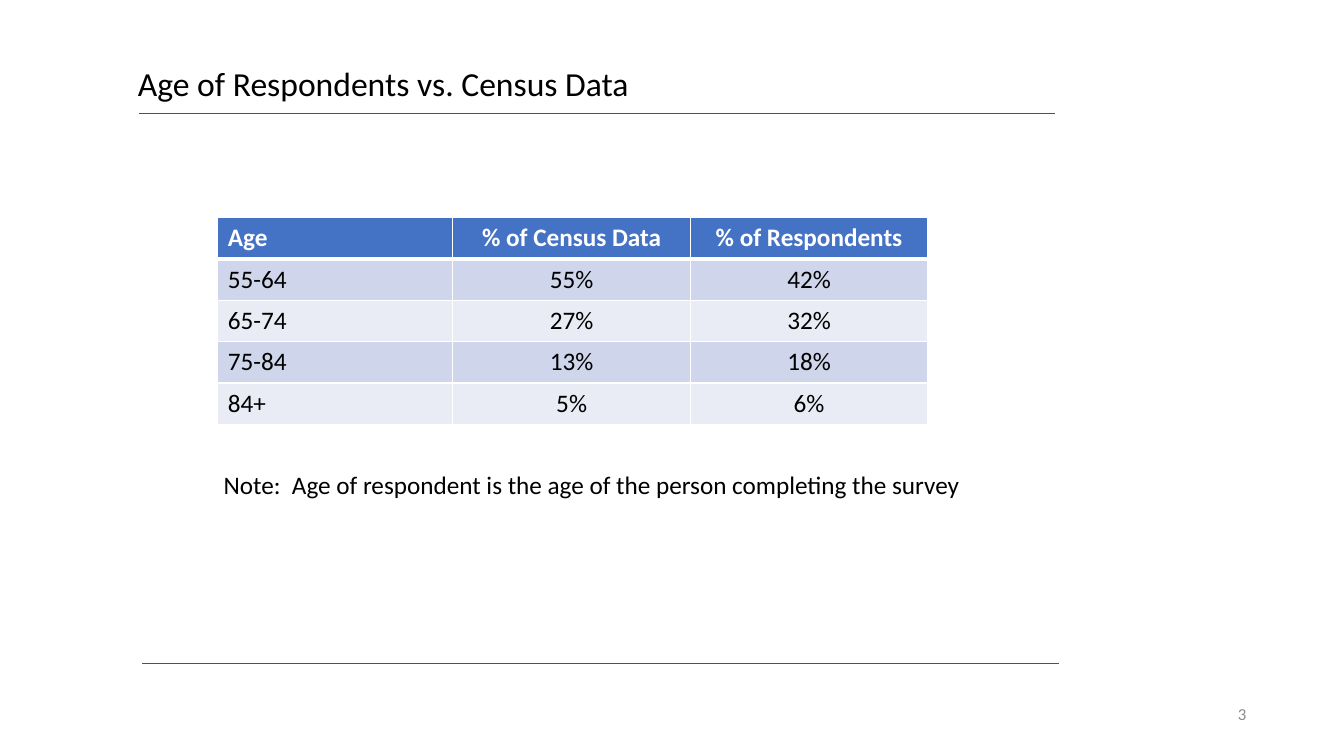
from dataclasses import dataclass

from lxml.etree import SubElement
from pptx import Presentation
from pptx.dml.color import RGBColor
from pptx.enum.shapes import MSO_CONNECTOR
from pptx.enum.text import MSO_ANCHOR as Anchor, PP_ALIGN as Align
from pptx.oxml import parse_xml
from pptx.oxml.ns import nsdecls, qn
from pptx.slide import Slide
from pptx.table import _Cell as Cell
from pptx.util import Pt

PX = 9144  # EMU per px, 100 px to the inch
FONT = "Calibri"
COLORS = {
    "text": "000000",
    "page": "8C8C8C",
    "rule": "2F5597",
    "white": "FFFFFF",
    "header": "4472C4",
    "odd": "CFD5EA",
    "even": "E9EBF5",
}


@dataclass(frozen=True)
class Label:
    text: str
    box: tuple[int, int, int, int]
    size: int
    color: str = "text"
    align: Align = Align.LEFT
    anchor: Anchor = Anchor.TOP
    spacing: float = 1.0


@dataclass(frozen=True)
class Rule:
    left: int
    right: int
    y: int


LABELS = [
    Label("3", (1007, 688, 450, 40), 12, "page", Align.CENTER, Anchor.MIDDLE),
    Label("Age of Respondents vs. Census Data", (127, 62, 1150, 82), 24, spacing=0.9),
    Label("Note:  Age of respondent is the age of the person completing the survey",
          (212, 461, 760, 40), 18),
]
RULES = [Rule(141, 1050, 658), Rule(138, 1046, 112)]

AGE_ROWS = [
    ("Age", "% of Census Data", "% of Respondents"),
    ("55-64", "55%", "42%"),
    ("65-74", "27%", "32%"),
    ("75-84", "13%", "18%"),
    ("84+", "5%", "6%"),
]
TABLE_LEFT, TABLE_TOP = 216, 216
COLUMN_WIDTHS = (233, 236, 235)
ROW_HEIGHT = 41


def rgb(name: str) -> RGBColor:
    return RGBColor.from_string(COLORS[name])


def write(frame, text: str, size: int, color: str, align: Align,
          spacing: float = 1.0, bold: bool = False) -> None:
    paragraph = frame.paragraphs[0]
    paragraph.alignment = align
    paragraph.line_spacing = spacing
    run = paragraph.add_run()
    run.text = text
    font_format = {"name": FONT, "size": Pt(size), "bold": bold}
    for attribute, value in font_format.items():
        setattr(run.font, attribute, value)
    run.font.color.rgb = rgb(color)


def draw_label(slide: Slide, label: Label) -> None:
    frame = slide.shapes.add_textbox(*(n * PX for n in label.box)).text_frame
    frame.word_wrap = True
    frame.vertical_anchor = label.anchor
    write(frame, label.text, label.size, label.color, label.align, label.spacing)


def draw_rule(slide: Slide, rule: Rule) -> None:
    line = slide.shapes.add_connector(
        MSO_CONNECTOR.STRAIGHT, rule.left * PX, rule.y * PX, rule.right * PX, rule.y * PX)
    line.line.color.rgb = rgb("rule")
    line.line.width = Pt(0.5)
    SubElement(line._element.spPr, qn("a:effectLst"))


def set_borders(cell: Cell, widths: dict[str, int]) -> None:
    properties = cell._tc.get_or_add_tcPr()
    for position, (side, width) in enumerate(widths.items()):
        properties.insert(position, parse_xml(
            f'<a:ln{side} {nsdecls("a")} w="{Pt(width)}"><a:solidFill>'
            f'<a:srgbClr val="{COLORS["white"]}"/></a:solidFill></a:ln{side}>'))


def draw_age_table(slide: Slide) -> None:
    table = slide.shapes.add_table(
        len(AGE_ROWS), len(COLUMN_WIDTHS), TABLE_LEFT * PX, TABLE_TOP * PX,
        sum(COLUMN_WIDTHS) * PX, len(AGE_ROWS) * ROW_HEIGHT * PX).table
    for column, width in zip(table.columns, COLUMN_WIDTHS):
        column.width = width * PX
    for r, values in enumerate(AGE_ROWS):
        table.rows[r].height = ROW_HEIGHT * PX
        is_header = r == 0
        fill = "header" if is_header else "odd" if r % 2 else "even"
        for c, value in enumerate(values):
            cell = table.cell(r, c)
            cell.fill.solid()
            cell.fill.fore_color.rgb = rgb(fill)
            write(cell.text_frame, value, 18, "white" if is_header else "text",
                  Align.CENTER if c else Align.LEFT, bold=is_header)
            set_borders(cell, {"L": 1, "R": 1, "T": 3 if r == 1 else 1,
                               "B": 3 if is_header else 1})


def main() -> None:
    deck = Presentation()
    deck.slide_width, deck.slide_height = 1333 * PX, 750 * PX
    slide = deck.slides.add_slide(deck.slide_layouts[6])

    # Rules above and below the content
    for rule in RULES:
        draw_rule(slide, rule)

    # Age comparison
    draw_age_table(slide)

    # Page number, title and note
    for label in LABELS:
        draw_label(slide, label)

    deck.save("out.pptx")


if __name__ == "__main__":
    main()
